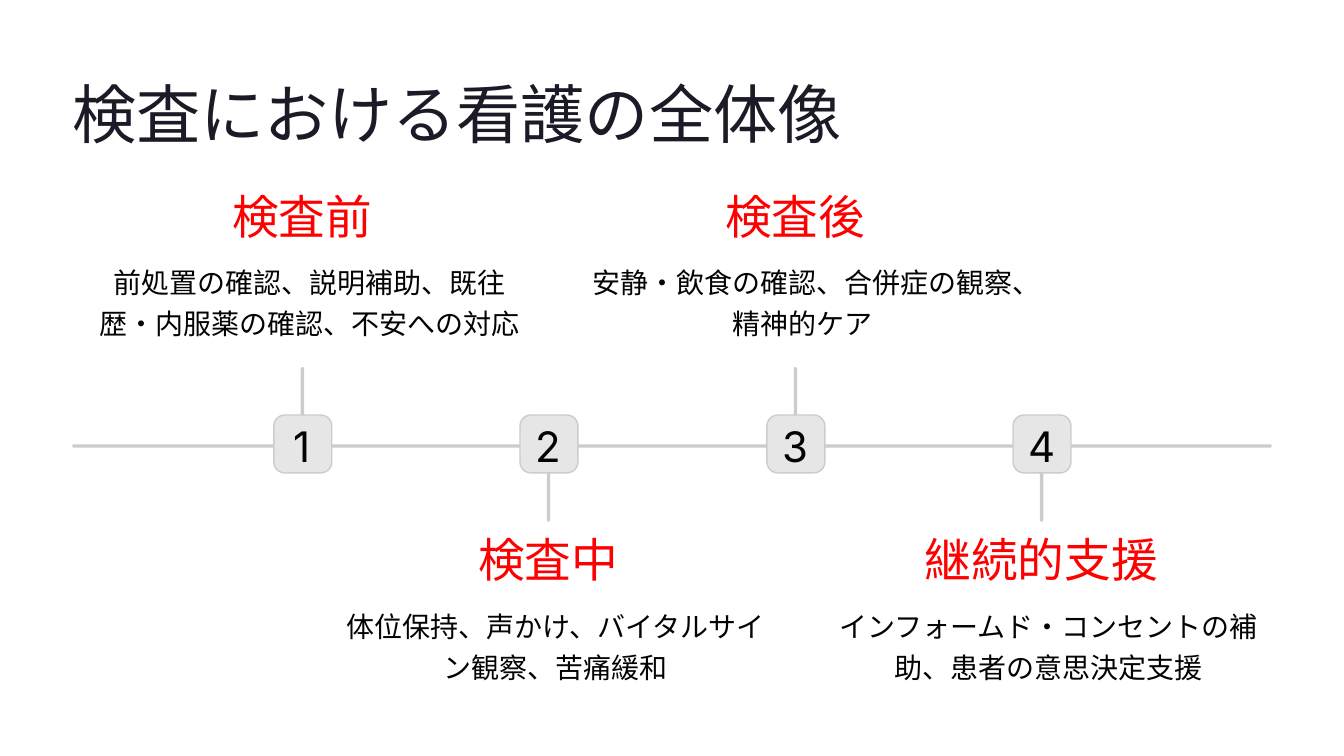
from pptx import Presentation
from pptx import util as u
from pptx.dml.color import RGBColor
from pptx.enum import shapes, text

PX = 9144  # EMU per px, 100 px to the inch
COLORS = {"title": "1B1B27", "head": "FF0000", "body": "030303",
          "line": "CCCCCC", "box": "E6E6E6"}
STEPS = [
    ("検査前", "前処置の確認、説明補助、既往歴・内服薬の確認、不安への対応"),
    ("検査中", "体位保持、声かけ、バイタルサイン観察、苦痛緩和"),
    ("検査後", "安静・飲食の確認、合併症の観察、精神的ケア"),
    ("継続的支援", "インフォームド・コンセントの補助、患者の意思決定支援"),
]
FIRST, LAST = 360, 1240  # centres of the outer steps
AXIS = 529


def color(name):
    return RGBColor.from_string(COLORS[name])


def emu(*sizes):
    return [u.Emu(size * PX) for size in sizes]


def add_text(slide, words, area, size, lead, tint, font="Inter",
             align=text.PP_ALIGN.CENTER, wrap=False):
    frame = slide.shapes.add_textbox(*emu(*area)).text_frame
    frame.margin_left = frame.margin_right = 0
    frame.margin_top = frame.margin_bottom = 0
    frame.word_wrap = wrap
    frame.text = words
    para = frame.paragraphs[0]
    para.alignment = align
    para.line_spacing = u.Pt(lead)
    face = para.runs[0].font
    face.name = font
    face.size = u.Pt(size)
    face.color.rgb = color(tint)


def add_block(slide, area, fill, curve, edge=None):
    """Add a rounded block; curve is the corner share of its short side."""
    block = slide.shapes.add_shape(
        shapes.MSO_SHAPE.ROUNDED_RECTANGLE, *emu(*area))
    block.shadow.inherit = False
    block.adjustments[0] = curve
    block.fill.solid()
    block.fill.fore_color.rgb = color(fill)
    if edge:
        block.line.color.rgb = color(edge)
        block.line.width = u.Pt(1.2)
    else:
        block.line.fill.background()


def add_step(slide, index, head, body):
    """Add one numbered step, above the axis when index is even."""
    mid = FIRST + round(index * (LAST - FIRST) / (len(STEPS) - 1))
    above = index % 2 == 0
    stem = AXIS - 92 if above else AXIS
    top = 242 if above else 651
    add_block(slide, (mid - 2, stem, 4, 92), "line", 0.5)
    add_block(slide, (mid - 34, 494, 69, 69), "box", 0.19, "line")
    add_text(slide, str(index + 1), (mid - 23, 515, 46, 57), 36, 33, "body")
    add_text(slide, head, (mid - 192, top, 383, 48), 40, 34.5, "head")
    add_text(slide, body, (mid - 243, top + 66, 502, 98), 24, 35, "body",
             font="Roboto", wrap=True)


def main():
    deck = Presentation()
    deck.slide_width, deck.slide_height = emu(1600, 900)
    slide = deck.slides.add_slide(deck.slide_layouts[6])
    add_text(slide, "検査における看護の全体像", (86, 84, 920, 96), 55, 69,
             "title", align=text.PP_ALIGN.LEFT)
    add_block(slide, (86, AXIS, 1428, 4), "line", 0.5)
    for index, (head, body) in enumerate(STEPS):
        add_step(slide, index, head, body)
    deck.save("out.pptx")


if __name__ == "__main__":
    main()
